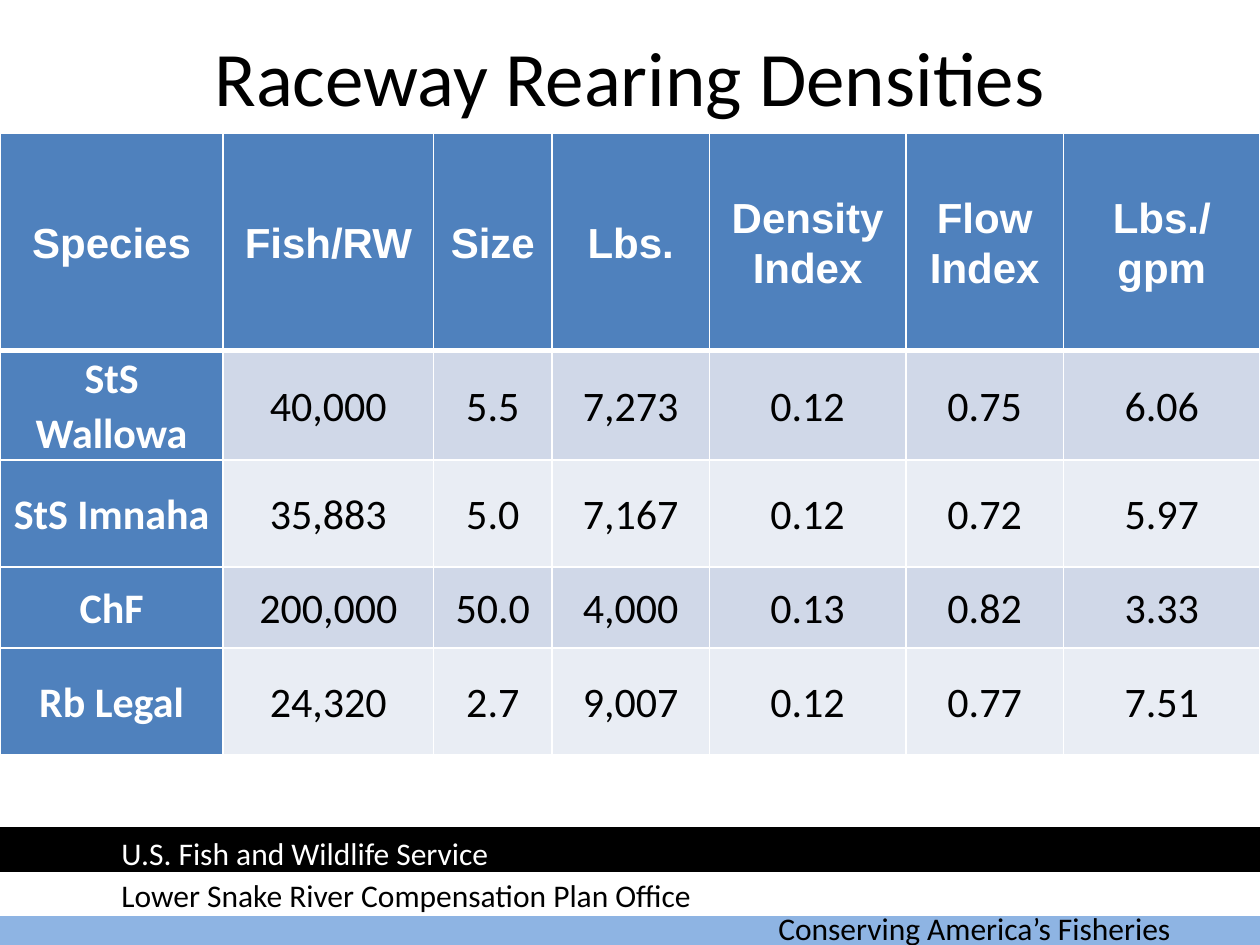
from lxml.etree import SubElement
from pptx import Presentation
from pptx.dml.color import RGBColor
from pptx.enum.shapes import MSO_SHAPE
from pptx.enum.text import MSO_ANCHOR, MSO_AUTO_SIZE, PP_ALIGN
from pptx.oxml.ns import qn
from pptx.util import Cm, Pt

BLACK = RGBColor(0x00, 0x00, 0x00)
WHITE = RGBColor(0xFF, 0xFF, 0xFF)
BLUE = RGBColor(0x4F, 0x81, 0xBD)
SKY = RGBColor(0x8E, 0xB4, 0xE3)
BAND_DARK = RGBColor(0xD0, 0xD8, 0xE8)
BAND_LIGHT = RGBColor(0xE9, 0xED, 0xF4)

PAGE_WIDTH, PAGE_HEIGHT = 25.4, 19.05
COLUMN_WIDTHS = [4.5, 4.24, 2.39, 3.17, 3.96, 3.18, 3.96]
ROW_HEIGHTS = [4.37, 2.21, 2.16, 1.63, 2.16]
DENSITIES = [
    ["Species", "Fish/RW", "Size", "Lbs.", "Density Index", "Flow Index", "Lbs./gpm"],
    ["StS Wallowa", "40,000", "5.5", "7,273", "0.12", "0.75", "6.06"],
    ["StS Imnaha", "35,883", "5.0", "7,167", "0.12", "0.72", "5.97"],
    ["ChF", "200,000", "50.0", "4,000", "0.13", "0.82", "3.33"],
    ["Rb Legal", "24,320", "2.7", "9,007", "0.12", "0.77", "7.51"],
]


class PageBuilder:
    """Holds the text style and the current slide."""

    body_font = "Calibri"
    header_font = "Arial"
    title_size, table_size, footer_size = 44, 24, 18

    def __init__(self, page):
        self.page = page

    def span(self, para, text, size, color, font=None, bold=False):
        span = para.add_run()
        span.text = text
        span.font.name = font or self.body_font
        span.font.size = Pt(size)
        span.font.bold = bold
        span.font.color.rgb = color

    def title(self, text, left, top, width, height):
        box = self.page.shapes.title
        box.left, box.top, box.width, box.height = map(Cm, (left, top, width, height))
        box.text_frame.vertical_anchor = MSO_ANCHOR.MIDDLE
        para = box.text_frame.paragraphs[0]
        para.alignment = PP_ALIGN.CENTER
        self.span(para, text, self.title_size, BLACK)

    def bar(self, left, top, color):
        bar = self.page.shapes.add_shape(
            MSO_SHAPE.RECTANGLE, Cm(left), Cm(top), Cm(PAGE_WIDTH), Cm(0.84))
        bar.shadow.inherit = False
        bar.fill.solid()
        bar.fill.fore_color.rgb = color
        bar.line.color.rgb = color
        bar.line.width = Pt(2)

    def label(self, text, left, top, width, color):
        box = self.page.shapes.add_textbox(Cm(left), Cm(top), Cm(width), Cm(1.03))
        box.text_frame.word_wrap = True
        box.text_frame.auto_size = MSO_AUTO_SIZE.SHAPE_TO_FIT_TEXT
        self.span(box.text_frame.paragraphs[0], text, self.footer_size, color)

    def borders(self, cell, top, bottom):
        properties = cell._tc.get_or_add_tcPr()
        for side, points in (("L", 1), ("R", 1), ("T", top), ("B", bottom)):
            line = SubElement(properties, qn(f"a:ln{side}"), w=str(Pt(points)))
            SubElement(SubElement(line, qn("a:solidFill")), qn("a:srgbClr"), val=str(WHITE))

    def cell(self, cell, text, row, column):
        header = row == 0
        heading = header or column == 0
        # Borders come before the fill in the cell properties
        self.borders(cell, 3 if row == 1 else 1, 3 if header else 1)
        cell.fill.solid()
        cell.fill.fore_color.rgb = BLUE if heading else BAND_DARK if row % 2 else BAND_LIGHT
        cell.margin_left = cell.margin_right = Cm(0.18)
        cell.margin_top = cell.margin_bottom = 0
        cell.vertical_anchor = MSO_ANCHOR.MIDDLE
        para = cell.text_frame.paragraphs[0]
        para.alignment = PP_ALIGN.CENTER
        para.line_spacing = 1.07
        para.space_after = Pt(8)
        self.span(para, text, self.table_size, WHITE if heading else BLACK,
                  self.header_font if header else self.body_font, heading)

    def table(self, rows, left, top):
        table = self.page.shapes.add_table(
            len(rows), len(rows[0]), Cm(left), Cm(top),
            Cm(sum(COLUMN_WIDTHS)), Cm(sum(ROW_HEIGHTS))).table
        table.first_col = True
        for column, width in zip(table.columns, COLUMN_WIDTHS):
            column.width = Cm(width)
        for row, height in zip(table.rows, ROW_HEIGHTS):
            row.height = Cm(height)
        for row, texts in enumerate(rows):
            for column, text in enumerate(texts):
                self.cell(table.cell(row, column), text, row, column)


def main():
    deck = Presentation()
    deck.slide_width, deck.slide_height = Cm(PAGE_WIDTH), Cm(PAGE_HEIGHT)
    builder = PageBuilder(deck.slides.add_slide(deck.slide_layouts[5]))

    # Footer bands, back to front
    builder.bar(-0.03, 18.21, SKY)
    builder.bar(0, 17.6, WHITE)
    builder.bar(0, 16.71, BLACK)

    # Footer labels
    builder.label("Conserving America’s Fisheries", 15.44, 18.21, 9.32, BLACK)
    builder.label("U.S. Fish and Wildlife Service", 2.2, 16.69, 10.57, WHITE)
    builder.label("Lower Snake River Compensation Plan Office", 2.2, 17.53, 12.62, BLACK)

    # Title and density table
    builder.title("Raceway Rearing Densities", 1.27, 0.43, 22.86, 2.21)
    builder.table(DENSITIES, 0, 2.69)

    deck.save("out.pptx")


if __name__ == "__main__":
    main()
